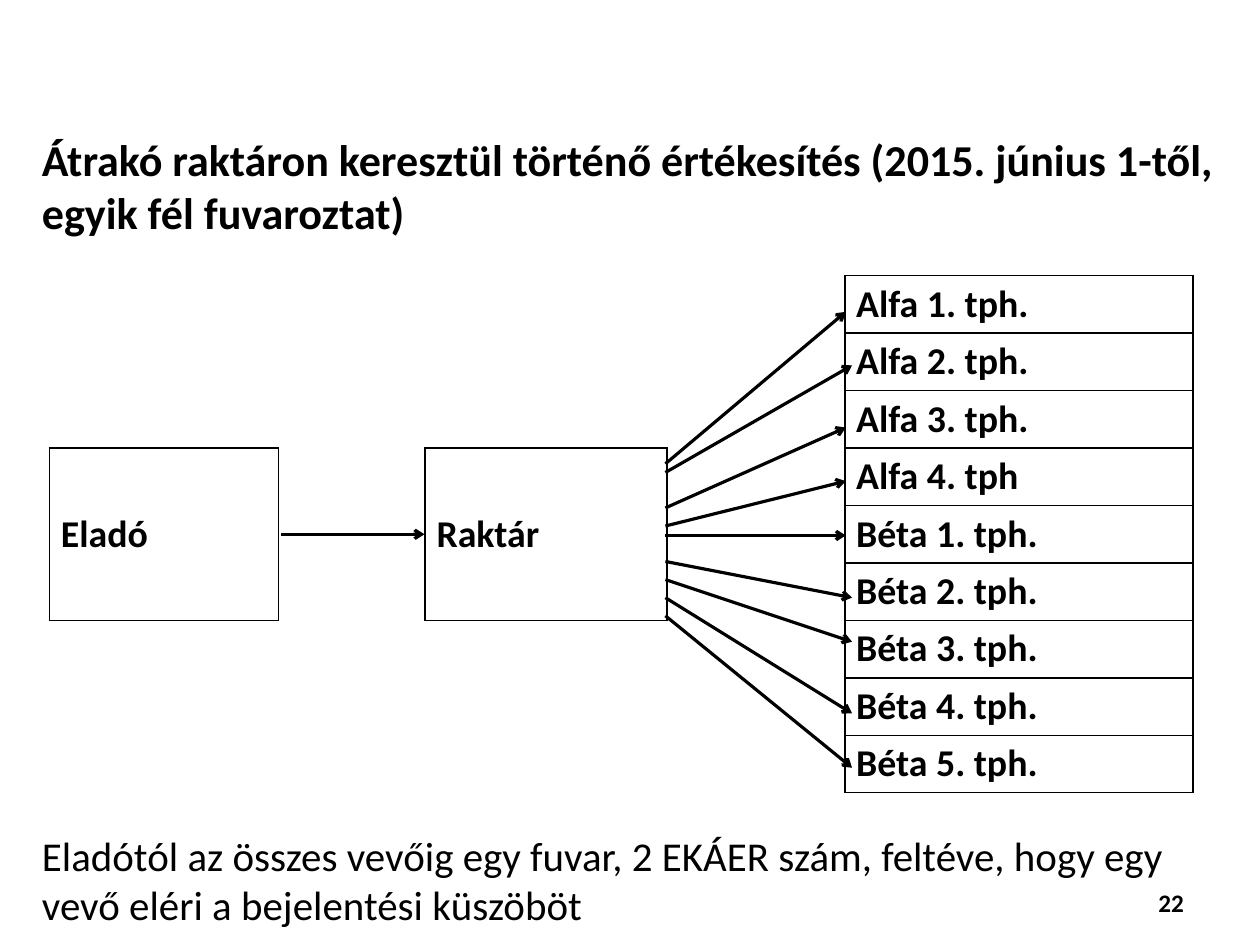
from lxml.etree import SubElement
from pptx import Presentation
from pptx.dml.color import RGBColor
from pptx.enum.shapes import MSO_CONNECTOR
from pptx.enum.text import MSO_ANCHOR, PP_ALIGN
from pptx.oxml import parse_xml
from pptx.oxml.ns import nsdecls, qn
from pptx.util import Pt

BLACK = RGBColor(0, 0, 0)
WHITE = RGBColor(255, 255, 255)
FONT = "Calibri"
PLAIN = "{2D5ABB26-0587-4C30-8999-92F81FD0307C}"

TITLE = ("Átrakó raktáron keresztül történő értékesítés "
         "(2015. június 1-től, egyik fél fuvaroztat)")
NOTE = ("Eladótól az összes vevőig egy fuvar, 2 EKÁER szám, feltéve, "
        "hogy egy vevő eléri a bejelentési küszöböt")
SHOPS = ["Alfa 1. tph.", "Alfa 2. tph.", "Alfa 3. tph.", "Alfa 4. tph",
         "Béta 1. tph.", "Béta 2. tph.", "Béta 3. tph.", "Béta 4. tph.",
         "Béta 5. tph."]
COLS = [145.5, 93, 153.5, 113, 221]
ROW = 36.5
SPAN = range(3, 6)
NEAR, FAR = 505.5, 509.5
ROUTES = [(119.5, NEAR, 23), (125, FAR, 57), (147.5, NEAR, 96.5),
          (159, NEAR, 130.5), (165, NEAR, 165), (181.5, FAR, 204.5),
          (193, FAR, 232.5), (204.5, FAR, 278), (216, FAR, 312.5)]


def style(par, size, bold):
    """Set the font of a paragraph."""
    font = par.font
    font.name, font.size, font.bold = FONT, Pt(size), bold
    font.color.rgb = BLACK


def add_text(slide, box, text, size, bold=True, align=PP_ALIGN.LEFT, side=4.3):
    """Place a wrapped text in the given box."""
    frame = slide.shapes.add_textbox(*map(Pt, box)).text_frame
    frame.word_wrap = True
    frame.margin_left = frame.margin_right = Pt(side)
    frame.margin_top = frame.margin_bottom = Pt(4.3)
    par = frame.paragraphs[0]
    par.text, par.alignment = text, align
    style(par, size, bold)


def frame_cell(cell):
    """Draw a thin black border on every side of a cell."""
    props = cell._tc.get_or_add_tcPr()
    for spot, side in enumerate("LRTB"):
        line = parse_xml(
            f'<a:ln{side} {nsdecls("a")} w="{Pt(1)}"><a:solidFill>'
            f'<a:srgbClr val="{BLACK}"/></a:solidFill></a:ln{side}>')
        props.insert(spot, line)


def fill_cell(cell, text):
    """Write a bold label in the middle of a cell."""
    cell.text = text
    cell.vertical_anchor = MSO_ANCHOR.MIDDLE
    style(cell.text_frame.paragraphs[0], 24, True)


def add_grid(slide, left, top):
    """Place the table of seller, warehouse and shops."""
    count = len(SHOPS)
    shape = slide.shapes.add_table(count, len(COLS), Pt(left), Pt(top),
                                   Pt(sum(COLS)), Pt(ROW * count))
    table = shape.table
    table.first_row = table.horz_banding = False
    table._tbl.tblPr.find(qn("a:tableStyleId")).text = PLAIN
    for col, width in zip(table.columns, COLS):
        col.width = Pt(width)
    for row in table.rows:
        row.height = Pt(ROW)
    for cell in table.iter_cells():
        cell.fill.solid()
        cell.fill.fore_color.rgb = WHITE
    for row, shop in enumerate(SHOPS):
        fill_cell(table.cell(row, 4), shop)
        frame_cell(table.cell(row, 4))
    for col, name in ((0, "Eladó"), (2, "Raktár")):
        for row in SPAN:
            frame_cell(table.cell(row, col))
        first = table.cell(SPAN[0], col)
        first.merge(table.cell(SPAN[-1], col))
        fill_cell(first, name)


def add_arrow(slide, start, end):
    """Draw an arrow between two points."""
    line = slide.shapes.add_connector(MSO_CONNECTOR.STRAIGHT,
                                      *map(Pt, (*start, *end)))
    line.line.color.rgb = BLACK
    line.line.width = Pt(2)
    SubElement(line.line._get_or_add_ln(), qn("a:tailEnd"), type="arrow")
    SubElement(line._element.spPr, qn("a:effectLst"))


def add_flow(slide, left, top):
    """Place the table and the arrows that link its cells."""
    add_grid(slide, left, top)
    mid = ROW * len(SHOPS) / 2
    add_arrow(slide, (left + 147, top + mid), (left + 238, top + mid))
    for begin, reach, end in ROUTES:
        add_arrow(slide, (left + 391, top + begin), (left + reach, top + end))


def main():
    """Build the slide and save it."""
    deck = Presentation()
    deck.slide_width, deck.slide_height = Pt(800), Pt(600)
    slide = deck.slides.add_slide(deck.slide_layouts[6])
    add_text(slide, (664.5, 559, 95, 42), "22", 16,
             align=PP_ALIGN.RIGHT, side=7.9)
    add_text(slide, (22.3, 80, 762.5, 78), TITLE, 28)
    add_text(slide, (22.3, 523, 762.5, 72), NOTE, 26, bold=False)
    add_flow(slide, 31.5, 175)
    deck.save("out.pptx")


if __name__ == "__main__":
    main()
